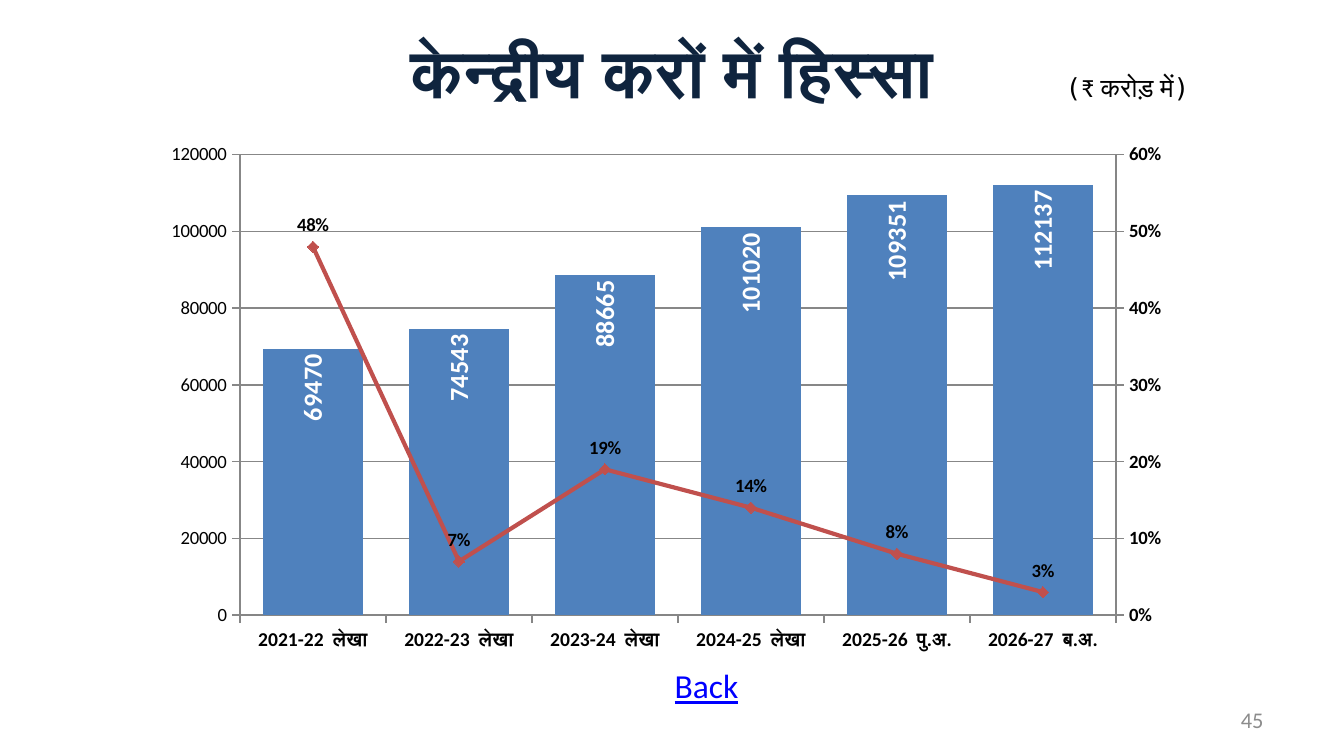
from pptx import Presentation
from pptx.chart.axis import ValueAxis
from pptx.chart.data import CategoryChartData
from pptx.dml.color import RGBColor
from pptx.enum.chart import (XL_CHART_TYPE, XL_LABEL_POSITION,
                             XL_MARKER_STYLE, XL_TICK_MARK)
from pptx.enum.text import MSO_ANCHOR, PP_ALIGN
from pptx.oxml import parse_xml
from pptx.oxml.ns import nsdecls, qn
from pptx.util import Cm, Pt

COLOURS = {"title": "0F243E", "text": "000000", "back": "0000FF",
           "number": "8C8C8C", "column": "4F81BD", "line": "C0504D",
           "inside": "FFFFFF", "axis": "868686"}
LATIN, HINDI = "Calibri", "DejaVu Sans Mono"

YEARS = ["2021-22  लेखा", "2022-23  लेखा", "2023-24  लेखा",
         "2024-25  लेखा", "2025-26  पु.अ.", "2026-27  ब.अ."]
AMOUNTS = [69470, 74543, 88665, 101020, 109351, 112137]
GROWTH = [0.48, 0.07, 0.19, 0.14, 0.08, 0.03]

LAYOUT = """<c:layout %s><c:manualLayout><c:layoutTarget val="inner"/>
<c:xMode val="edge"/><c:yMode val="edge"/><c:x val="0.106"/><c:y val="0.049"/>
<c:w val="0.818"/><c:h val="0.83"/></c:manualLayout></c:layout>"""
LINE_PLOT = """<c:lineChart %s><c:grouping val="standard"/>
<c:varyColors val="0"/><c:marker val="1"/>
<c:axId val="5001"/><c:axId val="5002"/></c:lineChart>"""
HIDDEN_AXIS = """<c:catAx %s><c:axId val="5001"/>
<c:scaling><c:orientation val="minMax"/></c:scaling><c:delete val="1"/>
<c:axPos val="b"/><c:crossAx val="5002"/><c:crosses val="autoZero"/></c:catAx>"""
RIGHT_AXIS = """<c:valAx %s><c:axId val="5002"/>
<c:scaling><c:orientation val="minMax"/></c:scaling><c:delete val="0"/>
<c:axPos val="r"/><c:majorTickMark val="out"/><c:minorTickMark val="none"/>
<c:tickLblPos val="nextTo"/><c:crossAx val="5001"/><c:crosses val="max"/></c:valAx>"""


def chart_part(xml):
    return parse_xml(xml % nsdecls("c"))


class Page:
    """Holds the style and the current slide."""

    def __init__(self, deck):
        self.slide = deck.slides.add_slide(deck.slide_layouts[6])

    def colour(self, name):
        return RGBColor.from_string(COLOURS[name])

    def set_font(self, font, size, colour, bold=False, name=LATIN):
        font.name, font.size, font.bold = name, Pt(size), bold
        font.color.rgb = self.colour(colour)

    def text(self, place, spans, size, colour, bold=False, underline=False,
             align=PP_ALIGN.LEFT, anchor=MSO_ANCHOR.TOP, wrap=True, inset=True):
        """Add a one-paragraph box; spans are (text, font name) pairs."""
        frame = self.slide.shapes.add_textbox(*map(Cm, place)).text_frame
        frame.word_wrap, frame.vertical_anchor = wrap, anchor
        if not inset:
            frame.margin_left = frame.margin_right = 0
            frame.margin_top = frame.margin_bottom = 0
        paragraph = frame.paragraphs[0]
        paragraph.alignment = align
        for words, name in spans:
            span = paragraph.add_run()
            span.text = words
            self.set_font(span.font, size, colour, bold, name)
            span.font.underline = underline

    def style_axis(self, axis, size):
        axis.major_tick_mark = XL_TICK_MARK.OUTSIDE
        axis.minor_tick_mark = XL_TICK_MARK.NONE
        self.set_font(axis.tick_labels.font, size, "text", bold=True)
        self.style_rule(axis.format.line)

    def style_rule(self, line):
        line.color.rgb = self.colour("axis")
        line.width = Pt(0.75)

    def style_value_axis(self, axis, size, top, step, number_format):
        self.style_axis(axis, size)
        axis.minimum_scale, axis.maximum_scale = 0, top
        axis.major_unit = step
        axis.tick_labels.number_format = number_format
        axis.tick_labels.number_format_is_linked = False

    def label(self, series, size, colour, position, number_format):
        labels = series.data_labels
        self.set_font(labels.font, size, colour, bold=True)
        labels.number_format = number_format
        labels.number_format_is_linked = False
        labels.position = position
        labels.show_value = True

    def split_line(self, chart):
        """Move the second series to a line plot on a right-hand axis."""
        area = chart._chartSpace.find(".//" + qn("c:plotArea"))
        for old_layout in area.findall(qn("c:layout")):
            area.remove(old_layout)
        area.insert(0, chart_part(LAYOUT))
        columns = area.find(qn("c:barChart"))
        series = columns.findall(qn("c:ser"))[1]
        for bar_setting in series.findall(qn("c:invertIfNegative")):
            series.remove(bar_setting)
        line_plot = chart_part(LINE_PLOT)
        line_plot.insert(2, series)
        columns.addnext(line_plot)
        right_axis = chart_part(RIGHT_AXIS)
        area.find(qn("c:valAx")).addnext(right_axis)
        right_axis.addnext(chart_part(HIDDEN_AXIS))
        return ValueAxis(right_axis)

    def column_line_chart(self, place):
        data = CategoryChartData()
        data.categories = YEARS
        data.add_series("Series 1", AMOUNTS, "0")
        data.add_series("Series 2", GROWTH, "0%")
        chart = self.slide.shapes.add_chart(
            XL_CHART_TYPE.COLUMN_CLUSTERED, *map(Cm, place), data).chart
        chart.has_legend = chart.has_title = False
        self.set_font(chart.font, 10, "text")
        right_axis = self.split_line(chart)

        self.style_axis(chart.category_axis, 10.5)
        self.style_value_axis(chart.value_axis, 9, 120000, 20000, "0")
        self.style_value_axis(right_axis, 10, 0.6, 0.1, "0%")
        self.style_rule(chart.value_axis.major_gridlines.format.line)

        column_plot, line_plot = chart.plots
        column_plot.gap_width = 46
        column_plot.vary_by_categories = False
        columns = column_plot.series[0]
        columns.invert_if_negative = False
        columns.format.fill.solid()
        columns.format.fill.fore_color.rgb = self.colour("column")
        self.label(columns, 14, "inside", XL_LABEL_POSITION.INSIDE_END, "0")
        turned = columns.data_labels._element.find(".//" + qn("a:bodyPr"))
        turned.set("rot", "-5400000")
        turned.set("vert", "horz")

        line = line_plot.series[0]
        line.smooth = False
        line.format.line.color.rgb = self.colour("line")
        line.format.line.width = Pt(2.25)
        line.marker.style, line.marker.size = XL_MARKER_STYLE.DIAMOND, 6
        line.marker.format.fill.solid()
        line.marker.format.fill.fore_color.rgb = self.colour("line")
        line.marker.format.line.color.rgb = self.colour("line")
        self.label(line, 10, "text", XL_LABEL_POSITION.ABOVE, "0%")


def main():
    deck = Presentation()
    deck.slide_width, deck.slide_height = Cm(25.4), Cm(14.29)
    page = Page(deck)
    page.text((1.27, 0.15, 22.86, 2.39), [("केन्द्रीय करों में हिस्सा", HINDI)], 36,
              "title", bold=True, align=PP_ALIGN.CENTER,
              anchor=MSO_ANCHOR.MIDDLE, inset=False)
    page.text((19.89, 1.22, 4.22, 0.84),
              [("(", HINDI), ("₹ ", LATIN), ("करोड़ में)", HINDI)], 14, "text")
    page.text((12.5, 12.45, 1.73, 1.02), [("Back", LATIN)], 18, "back",
              underline=True, wrap=False)
    page.column_line_chart((2.39, 2.41, 20.24, 10.49))
    page.text((18.21, 13.23, 5.92, 0.76), [("45", LATIN)], 12, "number",
              align=PP_ALIGN.RIGHT, anchor=MSO_ANCHOR.MIDDLE)
    deck.save("out.pptx")


if __name__ == "__main__":
    main()
